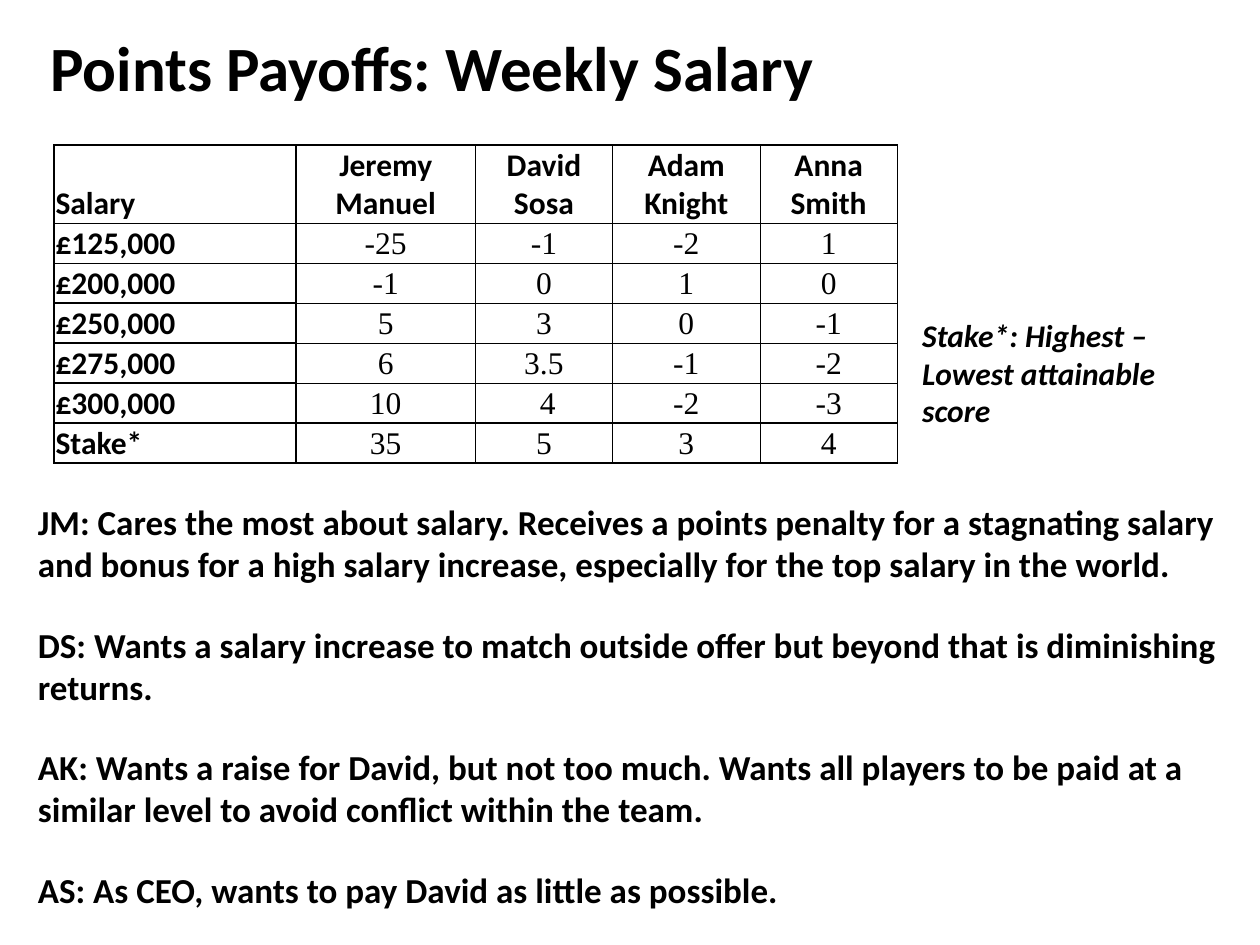
from lxml.etree import SubElement
from pptx import Presentation
from pptx.dml.color import RGBColor
from pptx.enum.text import MSO_ANCHOR as Anchor, MSO_AUTO_SIZE as AutoSize, PP_ALIGN as Align
from pptx.oxml.ns import qn
from pptx.util import Cm, Pt

BLACK = "000000"
WHITE = "FFFFFF"
THICK, THIN = 1, 0.5

PLAYERS = ["Jeremy Manuel", "David Sosa", "Adam Knight", "Anna Smith"]
PAYOFFS = [
    ["Salary", *PLAYERS],
    ["£125,000", "-25", "-1", "-2", "1"],
    ["£200,000", "-1", "0", "1", "0"],
    ["£250,000", "5", "3", "0", "-1"],
    ["£275,000", "6", "3.5", "-1", "-2"],
    ["£300,000", "10", " 4", "-2", "-3"],
    ["Stake*", "35", "5", "3", "4"],
]
COLUMN_WIDTHS = [4.88, 3.61, 2.77, 2.97, 2.77]
HEADER_HEIGHT, ROW_HEIGHT = 1.55, 0.78

MOTIVES = [
    "JM: Cares the most about salary. Receives a points penalty for a stagnating salary "
    "and bonus for a high salary increase, especially for the top salary in the world.",
    "DS: Wants a salary increase to match outside offer but beyond that is diminishing returns.",
    "AK: Wants a raise for David, but not too much. Wants all players to be paid at a "
    "similar level to avoid conflict within the team.",
    "AS: As CEO, wants to pay David as little as possible.",
]


def color(hex_string):
    return RGBColor.from_string(hex_string)


def write(paragraph, text, size=18, font="Calibri", bold=True, italic=False,
          align=Align.LEFT, before=0):
    paragraph.alignment = align
    paragraph.space_before = Pt(before)
    run = paragraph.add_run()
    run.text = text
    run.font.size = Pt(size)
    run.font.name = font
    run.font.bold = bold
    run.font.italic = italic
    run.font.color.rgb = color(BLACK)


def place(shape, left, top, width, height):
    shape.left, shape.top = Cm(left), Cm(top)
    shape.width, shape.height = Cm(width), Cm(height)
    frame = shape.text_frame
    frame.word_wrap = True
    frame.auto_size = AutoSize.NONE
    frame.vertical_anchor = Anchor.MIDDLE
    return frame


def add_border(cell, side, points):
    line = SubElement(cell._tc.get_or_add_tcPr(), qn(f"a:ln{side}"), w=str(Pt(points)))
    fill = SubElement(line, qn("a:solidFill"))
    SubElement(fill, qn("a:srgbClr"), val=BLACK)


def build_title(slide, left, top, width, height):
    frame = place(slide.shapes.title, left, top, width, height)
    write(frame.paragraphs[0], "Points Payoffs: Weekly Salary", size=36, align=Align.CENTER)


def build_payoff_table(slide, left, top):
    heights = [HEADER_HEIGHT] + [ROW_HEIGHT] * (len(PAYOFFS) - 1)
    table = slide.shapes.add_table(
        len(PAYOFFS), len(COLUMN_WIDTHS), Cm(left), Cm(top),
        Cm(sum(COLUMN_WIDTHS)), Cm(sum(heights))).table
    table.first_row = table.horz_banding = False
    for column, width in zip(table.columns, COLUMN_WIDTHS):
        column.width = Cm(width)
    for row, height in zip(table.rows, heights):
        row.height = Cm(height)

    # Thick rules frame the table, the header, the salaries and the stake row
    last_row, last_column = len(PAYOFFS) - 1, len(COLUMN_WIDTHS) - 1
    for r, values in enumerate(PAYOFFS):
        for c, value in enumerate(values):
            cell = table.cell(r, c)
            thick_sides = {
                "L": c <= 1,
                "R": c in (0, last_column),
                "T": c == 0 or r in (0, 1, last_row),
                "B": c == 0 or r in (0, last_row - 1, last_row),
            }
            for side, is_thick in thick_sides.items():
                add_border(cell, side, THICK if is_thick else THIN)
            cell.fill.background()
            cell.margin_left = cell.margin_right = cell.margin_top = Cm(0.03)
            cell.margin_bottom = 0
            is_label = r == 0 or c == 0
            cell.vertical_anchor = Anchor.BOTTOM if is_label else Anchor.MIDDLE
            write(cell.text_frame.paragraphs[0], value,
                  font="Calibri" if is_label else "Times New Roman", bold=is_label,
                  align=Align.LEFT if c == 0 else Align.CENTER)


def build_stake_note(slide, left, top, width, height):
    note = slide.shapes.add_textbox(Cm(left), Cm(top), Cm(width), Cm(height))
    frame = place(note, left, top, width, height)
    write(frame.paragraphs[0], "Stake*: Highest – Lowest attainable score", italic=True)


def build_motives(slide, left, top, width, height):
    frame = place(slide.placeholders[1], left, top, width, height)
    frame.margin_bottom = Cm(0.76)
    for i, motive in enumerate(MOTIVES):
        paragraph = frame.add_paragraph() if i else frame.paragraphs[0]
        write(paragraph, motive, size=20, before=22 if i else 0)
        # Plain paragraphs: no bullet and no hanging indent
        properties = paragraph._p.get_or_add_pPr()
        properties.set("marL", "0")
        properties.set("indent", "0")
        SubElement(properties, qn("a:buNone"))


def main():
    deck = Presentation()
    deck.slide_width, deck.slide_height = Cm(25.4), Cm(19.05)
    slide = deck.slides.add_slide(deck.slide_layouts[1])
    slide.background.fill.solid()
    slide.background.fill.fore_color.rgb = color(WHITE)

    build_title(slide, 0.71, -0.25, 16, 3.18)
    build_stake_note(slide, 18.34, 5.92, 6.45, 3.18)
    build_payoff_table(slide, 1.09, 2.92)
    build_motives(slide, 0.51, 12.95, 25.2, 3.18)
    deck.save("out.pptx")


if __name__ == "__main__":
    main()
